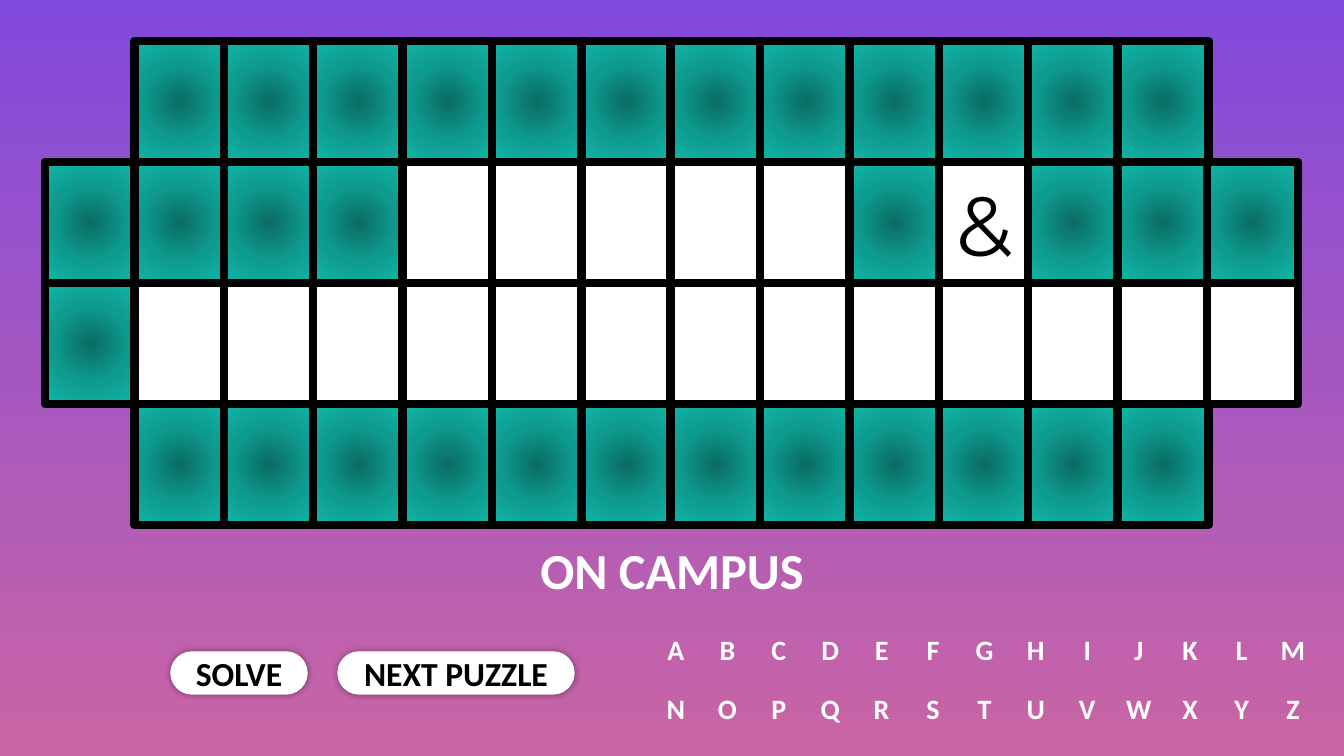
from pptx import Presentation
from pptx import util as u
from pptx.dml.color import RGBColor
from pptx.enum import shapes, text
from pptx.oxml import parse_xml
from pptx.oxml.ns import nsdecls

EMU_PER_PX = 9144000 / 1008
BLACK, WHITE = "000000", "FFFFFF"
SKY_TOP, SKY_BOTTOM = "8149DC", "C965A4"
TEAL_STOPS = [(0, "0A6C63"), (50, "0E9A8E"), (100, "10B7A8")]

# '#' is a teal tile, '_' an empty white one, a space no tile at all
BOARD_ROWS = [
    " ############ ",
    "####_____#&###",
    "#_____________",
    " ############ ",
]
LETTER_ROWS = ["ABCDEFGHIJKLM", "NOPQRSTUVWXYZ"]


def px(length):
    return u.Emu(round(length * EMU_PER_PX))


def color(hex_code):
    return RGBColor.from_string(hex_code)


def write(shape, words, size, hex_code, font="Calibri", bold=True):
    """Put one centred line of text in the middle of the shape."""
    frame = shape.text_frame
    frame.word_wrap = False
    frame.vertical_anchor = text.MSO_ANCHOR.MIDDLE
    frame.margin_left = frame.margin_right = 0
    frame.margin_top = frame.margin_bottom = 0
    line = frame.paragraphs[0]
    line.text = words
    line.alignment = text.PP_ALIGN.CENTER
    line.font.name = font
    line.font.size = u.Pt(size)
    line.font.bold = bold
    line.font.color.rgb = color(hex_code)


def add_label(slide, box, words, size):
    label = slide.shapes.add_textbox(*map(px, box))
    write(label, words, size, WHITE)


def add_block(slide, preset, box, outline, outline_width):
    block = slide.shapes.add_shape(preset, *map(px, box))
    block.shadow.inherit = False
    block.fill.solid()
    block.fill.fore_color.rgb = color(WHITE)
    block.line.color.rgb = color(outline)
    block.line.width = u.Pt(outline_width)
    return block


def fill_teal_glow(tile):
    stops = "".join(
        f'<a:gs pos="{position * 1000}"><a:srgbClr val="{hex_code}"/></a:gs>'
        for position, hex_code in TEAL_STOPS
    )
    glow = parse_xml(
        f'<a:gradFill {nsdecls("a")} rotWithShape="1"><a:gsLst>{stops}</a:gsLst>'
        '<a:path path="circle">'
        '<a:fillToRect l="50000" t="50000" r="50000" b="50000"/>'
        "</a:path></a:gradFill>"
    )
    properties = tile._element.spPr
    properties.replace(properties.find(".//{*}solidFill"), glow)


def paint_background(slide):
    fill = slide.background.fill
    fill.gradient()
    fill.gradient_angle = 270
    for stop, position, hex_code in zip(
        fill.gradient_stops, (0, 1), (SKY_TOP, SKY_BOTTOM)
    ):
        stop.position = position
        stop.color.rgb = color(hex_code)


def add_board(slide, box):
    left, top, width, height = box
    tile_width = 91
    row_height = height / len(BOARD_ROWS)
    column_step = (width - tile_width) / (len(BOARD_ROWS[0]) - 1)
    for row, marks in enumerate(BOARD_ROWS):
        for column, mark in enumerate(marks):
            if mark == " ":
                continue
            place = (left + column * column_step, top + row * row_height,
                     tile_width, row_height)
            tile = add_block(slide, shapes.MSO_SHAPE.RECTANGLE, place, BLACK, 6)
            if mark == "#":
                fill_teal_glow(tile)
            elif mark != "_":
                write(tile, mark, 60, BLACK, "Montserrat", False)


def add_button(slide, box, words):
    button = add_block(slide, shapes.MSO_SHAPE.ROUNDED_RECTANGLE, box, WHITE, 1)
    button.adjustments[0] = 0.5
    button._element.spPr.find("{*}effectLst").append(parse_xml(
        f'<a:outerShdw {nsdecls("a")} blurRad="{u.Pt(5)}" dist="0" dir="0" '
        f'algn="ctr" rotWithShape="0"><a:srgbClr val="{BLACK}">'
        '<a:alpha val="40000"/></a:srgbClr></a:outerShdw>'
    ))
    write(button, words, 24, BLACK)


def add_alphabet(slide, box):
    left, top, width, height = box
    letter_width, letter_height = 40, 62
    column_step = (width - letter_width) / (len(LETTER_ROWS[0]) - 1)
    row_step = height - letter_height
    for row, letters in enumerate(LETTER_ROWS):
        for column, letter in enumerate(letters):
            place = (left + column * column_step, top + row * row_step,
                     letter_width, letter_height)
            add_label(slide, place, letter, 20)


def main():
    deck = Presentation()
    deck.slide_width, deck.slide_height = px(1344), px(756)
    slide = deck.slides.add_slide(deck.slide_layouts[6])
    paint_background(slide)
    add_board(slide, (45, 41, 1253, 484))
    add_label(slide, (0, 538, 1344, 62), "ON CAMPUS", 36)
    add_button(slide, (171, 652, 136, 42), "SOLVE")
    add_button(slide, (338, 652, 236, 42), "NEXT PUZZLE")
    add_alphabet(slide, (656, 618, 657, 121))
    deck.save("out.pptx")


if __name__ == "__main__":
    main()
